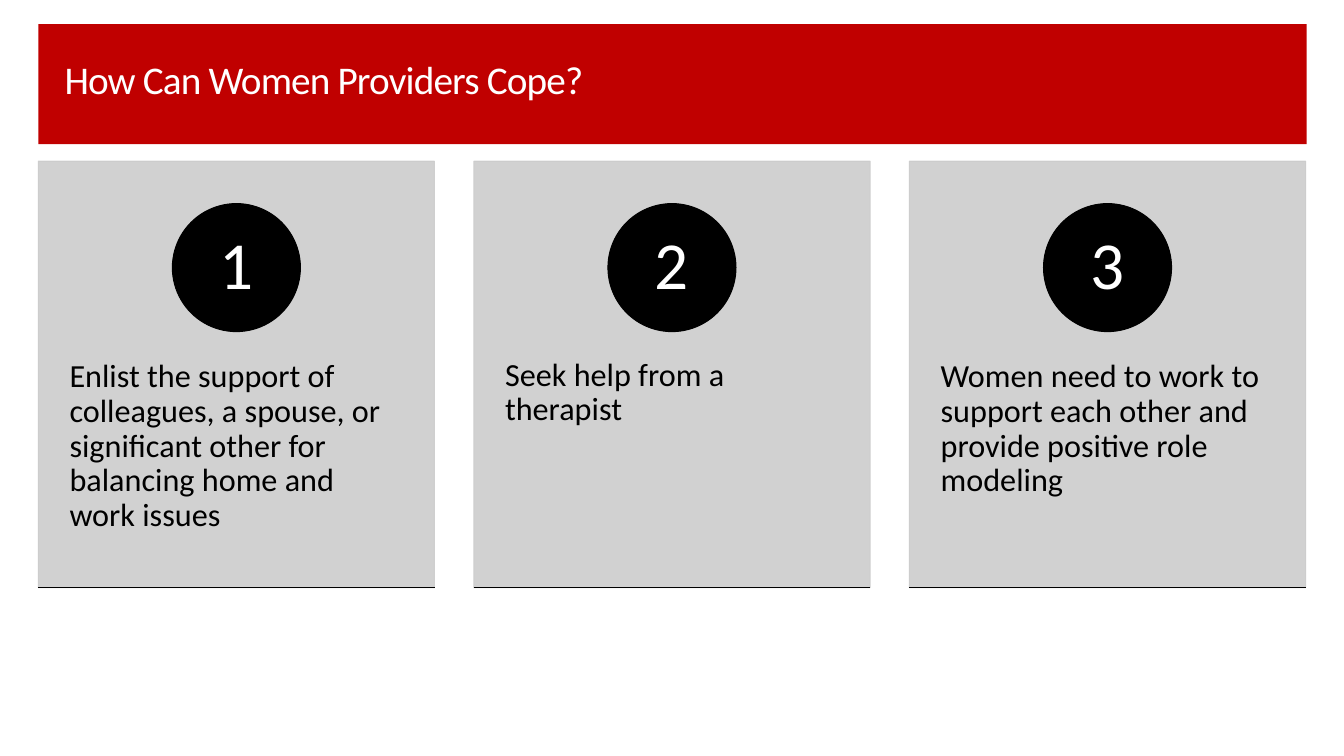
from dataclasses import dataclass

from lxml.etree import SubElement
from pptx import Presentation
from pptx.dml.color import RGBColor
from pptx.enum.shapes import MSO_CONNECTOR as Connector, MSO_SHAPE as Shape
from pptx.enum.text import MSO_ANCHOR as Anchor, PP_ALIGN as Align
from pptx.oxml.ns import qn
from pptx.util import Inches, Pt


@dataclass(frozen=True)
class Theme:
    """Colours, font and type sizes of the slide."""
    red: str = "C00000"
    grey: str = "CCCCCC"
    black: str = "000000"
    white: str = "FFFFFF"
    font: str = "Calibri"
    title_size: int = 28
    body_size: int = 23
    number_size: int = 48
    line_width: float = 0.75


@dataclass(frozen=True)
class Box:
    """A rectangle in inches."""
    left: float
    top: float
    width: float
    height: float

    def inside(self, left, top, width, height):
        """Return a box placed relative to this one."""
        return Box(self.left + left, self.top + top, width, height)

    def lengths(self):
        """Return the position and size as slide lengths."""
        return [Inches(n) for n in (self.left, self.top, self.width, self.height)]


THEME = Theme()
BAND = Box(0.38, 0.24, 12.58, 1.19)
CARD = Box(0.38, 1.6, 3.93, 4.23)
CARD_STEP = 4.32
TITLE = "How Can Women Providers Cope?"
ADVICE = [
    "Enlist the support of colleagues, a spouse, or significant other "
    "for balancing home and work issues",
    "Seek help from a therapist",
    "Women need to work to support each other and provide positive role modeling",
]


def add_filled(page, kind, box, colour, outlined=True, alpha=None):
    """Add a flat preset shape, optionally outlined and translucent."""
    shape = page.shapes.add_shape(kind, *box.lengths())
    shape.shadow.inherit = False
    shape.fill.solid()
    shape.fill.fore_color.rgb = RGBColor.from_string(colour)
    if outlined:
        shape.line.color.rgb = RGBColor.from_string(colour)
        shape.line.width = Pt(THEME.line_width)
    else:
        shape.line.fill.background()
    if alpha is not None:
        for colour_node in shape.element.spPr.iter(qn("a:srgbClr")):
            SubElement(colour_node, qn("a:alpha"), val=str(alpha * 1000))
    return shape


def write(frame, text, size, colour, insets, anchor=Anchor.TOP, align=Align.LEFT):
    """Write one formatted paragraph into a text frame and return its run."""
    frame.word_wrap = True
    frame.vertical_anchor = anchor
    (frame.margin_left, frame.margin_top,
     frame.margin_right, frame.margin_bottom) = [Inches(n) for n in insets]
    para = frame.paragraphs[0]
    para.alignment = align
    para.line_spacing = 0.9
    span = para.add_run()
    span.text = text
    span.font.name = THEME.font
    span.font.size = Pt(size)
    span.font.color.rgb = RGBColor.from_string(colour)
    return span


def add_header(page, box):
    """Place the title over its red band."""
    title = page.shapes.title
    band = add_filled(page, Shape.RECTANGLE, box, THEME.red, outlined=False)
    title.element.addprevious(band.element)
    title.left, title.top, title.width, title.height = box.inside(
        0.16, 0.29, 11.54, 0.99).lengths()
    span = write(title.text_frame, TITLE, THEME.title_size, THEME.white,
                 (0.1, 0.05, 0.1, 0.48), Anchor.MIDDLE)
    span.font._element.set("spc", "-60")


def add_card(page, box, number, advice):
    """Place one numbered card with its advice and bottom rule."""
    add_filled(page, Shape.RECTANGLE, box, THEME.grey, alpha=90)
    body = page.shapes.add_textbox(*box.inside(0, 1.61, box.width, 2.54).lengths())
    write(body.text_frame, advice, THEME.body_size, THEME.black,
          (0.31, 0.36, 0.31, 0.36))

    badge = box.inside((box.width - 1.27) / 2, 0.42, 1.27, 1.27)
    add_filled(page, Shape.OVAL, badge, THEME.black)
    label = page.shapes.add_textbox(*badge.inside(0.185, 0.185, 0.9, 0.9).lengths())
    write(label.text_frame, str(number), THEME.number_size, THEME.white,
          (0.1, 0.01, 0.1, 0.01), Anchor.MIDDLE, Align.CENTER)

    left, bottom = Inches(box.left), Inches(box.top + box.height)
    rule = page.shapes.add_connector(
        Connector.STRAIGHT, left, bottom, left + Inches(box.width), bottom)
    rule.line.color.rgb = RGBColor.from_string(THEME.black)
    rule.line.width = Pt(THEME.line_width)
    SubElement(rule.element.spPr, qn("a:effectLst"))


def main():
    """Build and save the deck."""
    deck = Presentation()
    deck.slide_width, deck.slide_height = Inches(13.33), Inches(7.5)
    page = deck.slides.add_slide(deck.slide_layouts.get_by_name("Title Only"))
    add_header(page, BAND)
    for index, advice in enumerate(ADVICE):
        box = CARD.inside(index * CARD_STEP, 0, CARD.width, CARD.height)
        add_card(page, box, index + 1, advice)
    deck.save("out.pptx")


if __name__ == "__main__":
    main()
